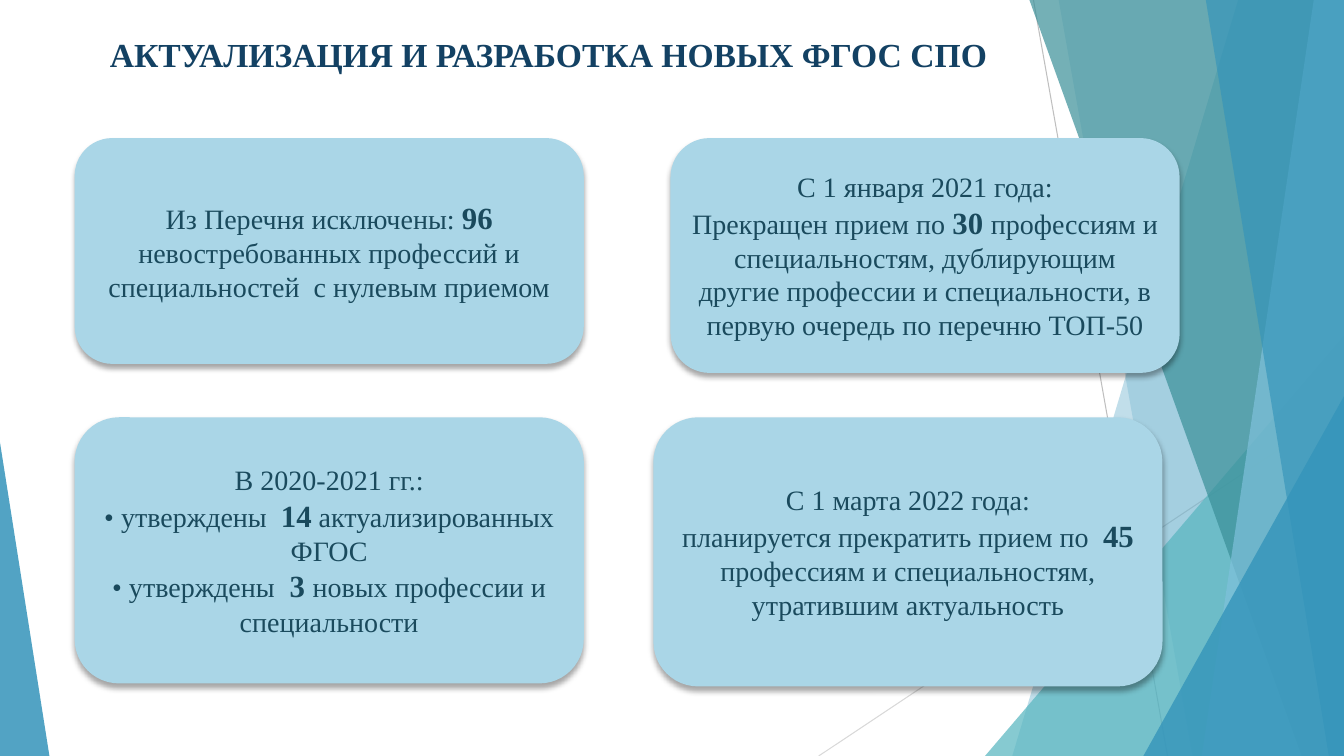
import pptx
import pptx.dml.color
import pptx.enum.shapes
import pptx.enum.text
import pptx.oxml
import pptx.oxml.ns
import pptx.util

WIDTH, HEIGHT = 13.33, 7.5
FONT = "Times New Roman"
BLUE, CARD, CARD_TEXT, TITLE = "3494BA", "AAD6E7", "1A4A5D", "134163"
SHAPES = pptx.enum.shapes.MSO_SHAPE
CENTER = pptx.enum.text.PP_ALIGN.CENTER
ANCHORS = pptx.enum.text.MSO_ANCHOR

# Card grid: two columns and two rows
COLUMN, GUTTER, CARD_WIDTH = 0.74, 0.69, 5.05
RIGHT_COLUMN = COLUMN + CARD_WIDTH + GUTTER
ROWS = (1.37, 4.14)

# Facets, back to front: bands run from a top x to a bottom x and fill to the
# right edge; triangles stand on the bottom edge (left, top, width, apex).
FACETS = [
    ("band", (12.28, 10.04), BLUE, 30),
    ("band", (10.5, 11.83), BLUE, 20),
    ("triangle", (9.77, 3.33, 3.56, 1), "58B6C0", 72),
    ("band", (10.21, 12.91), "3A8F98", 70),
    ("band", (13.03, 11.92), "7FC1DB", 70),
    ("band", (11.96, 13.18), BLUE, 65),
    ("triangle", (11.34, 3.93, 1.99, 1), BLUE, 80),
    ("triangle", (0, 4.39, 0.49, 0), BLUE, 85),
]
RAYS = [((10.25, 0), (11.58, HEIGHT), "BFBFBF"),
        ((WIDTH, 4.03), (8.12, HEIGHT), "D9D9D9")]

# Each card: box, then paragraphs of (text, emphasised) spans
CARDS = [
    ((COLUMN, ROWS[0], CARD_WIDTH, 2.24), [
        [("Из Перечня исключены: ", False), ("96 ", True),
         ("невостребованных профессий и специальностей  с нулевым приемом", False)]]),
    ((RIGHT_COLUMN, ROWS[1], CARD_WIDTH, 2.67), [
        [("С 1 марта 2022 года:", False)],
        [("планируется прекратить прием по  ", False), ("45", True),
         (" профессиям и специальностям, утратившим актуальность", False)]]),
    ((COLUMN, ROWS[1], CARD_WIDTH, 2.64), [
        [("В 2020-2021 гг.:", False)],
        [("• утверждены  ", False), ("14", True),
         (" актуализированных ФГОС", False)],
        [("• утверждены ", False), (" 3 ", True),
         ("новых профессии и специальности", False)]]),
    ((RIGHT_COLUMN + 0.17, ROWS[0], CARD_WIDTH, 2.33), [
        [("С 1 января 2021 года:", False)],
        [("Прекращен прием по ", False), ("30 ", True),
         ("профессиям и специальностям, дублирующим другие профессии и "
          "специальности, в первую очередь по перечню ТОП-50", False)]]),
]


def inches(*lengths):
    return [pptx.util.Inches(length) for length in lengths]


def color(value):
    return pptx.dml.color.RGBColor.from_string(value)


def add_xml(parent, tag, content="", **attributes):
    listed = " ".join(f'{name}="{value}"' for name, value in attributes.items())
    parent.append(pptx.oxml.parse_xml(
        f'<a:{tag} {pptx.oxml.ns.nsdecls("a")} {listed}>{content}</a:{tag}>'))


def paint(shape, fill, opacity=100):
    shape.shadow.inherit = False
    shape.line.fill.background()
    shape.fill.solid()
    shape.fill.fore_color.rgb = color(fill)
    if opacity < 100:
        tint = shape.fill._xPr.find(".//" + pptx.oxml.ns.qn("a:srgbClr"))
        add_xml(tint, "alpha", val=opacity * 1000)


def add_span(para, text, size, bold, ink):
    span = para.add_run()
    span.text = text
    formats = {"name": FONT, "size": pptx.util.Pt(size), "bold": bold}
    for name, value in formats.items():
        setattr(span.font, name, value)
    span.font.color.rgb = color(ink)


def add_band(page, top_x, bottom_x):
    corners = [(WIDTH, 0), (WIDTH, HEIGHT), (bottom_x, HEIGHT)]
    builder = page.shapes.build_freeform(*inches(top_x, 0), scale=1.0)
    builder.add_line_segments([inches(*corner) for corner in corners], close=True)
    return builder.convert_to_shape()


def add_triangle(page, left, top, width, apex):
    box = inches(left, top, width, HEIGHT - top)
    shape = page.shapes.add_shape(SHAPES.ISOSCELES_TRIANGLE, *box)
    shape.adjustments[0] = apex
    return shape


def add_backdrop(page):
    for start, end, stroke in RAYS:
        ray = page.shapes.add_connector(
            pptx.enum.shapes.MSO_CONNECTOR.STRAIGHT, *inches(*start, *end))
        ray.line.color.rgb = color(stroke)
        ray.line.width = pptx.util.Pt(0.75)
        add_xml(ray._element.spPr, "effectLst")
    builders = {"band": add_band, "triangle": add_triangle}
    for kind, geometry, fill, opacity in FACETS:
        paint(builders[kind](page, *geometry), fill, opacity)


def add_title(page, box, text):
    title = page.shapes.title
    for name, value in zip(("left", "top", "width", "height"), inches(*box)):
        setattr(title, name, value)
    frame = title.text_frame
    frame.vertical_anchor = ANCHORS.TOP
    frame.margin_top = pptx.util.Inches(0.1)
    frame.paragraphs[0].alignment = CENTER
    add_span(frame.paragraphs[0], text, 24, True, TITLE)


def add_card(page, box, paragraphs):
    card = page.shapes.add_shape(SHAPES.ROUNDED_RECTANGLE, *inches(*box))
    paint(card, CARD)
    # Soft shadow falling straight down
    effects = card._element.spPr.find(pptx.oxml.ns.qn("a:effectLst"))
    add_xml(effects, "outerShdw",
            '<a:srgbClr val="000000"><a:alpha val="35000"/></a:srgbClr>',
            blurRad=pptx.util.Pt(4), dist=pptx.util.Pt(3), dir=90 * 60000,
            rotWithShape=0)
    frame = card.text_frame
    frame.word_wrap = True
    frame.vertical_anchor = ANCHORS.MIDDLE
    for index, spans in enumerate(paragraphs):
        para = frame.add_paragraph() if index else frame.paragraphs[0]
        para.alignment = CENTER
        for text, emphasised in spans:
            add_span(para, text, 22 if emphasised else 20, emphasised, CARD_TEXT)


def main():
    deck = pptx.Presentation()
    deck.slide_width, deck.slide_height = inches(WIDTH, HEIGHT)
    page = deck.slides.add_slide(deck.slide_layouts.get_by_name("Title Only"))
    add_backdrop(page)
    add_title(page, (COLUMN, 0.24, 9.4, 0.7),
              "АКТУАЛИЗАЦИЯ И РАЗРАБОТКА НОВЫХ ФГОС СПО")
    for box, paragraphs in CARDS:
        add_card(page, box, paragraphs)
    deck.save("out.pptx")


if __name__ == "__main__":
    main()
